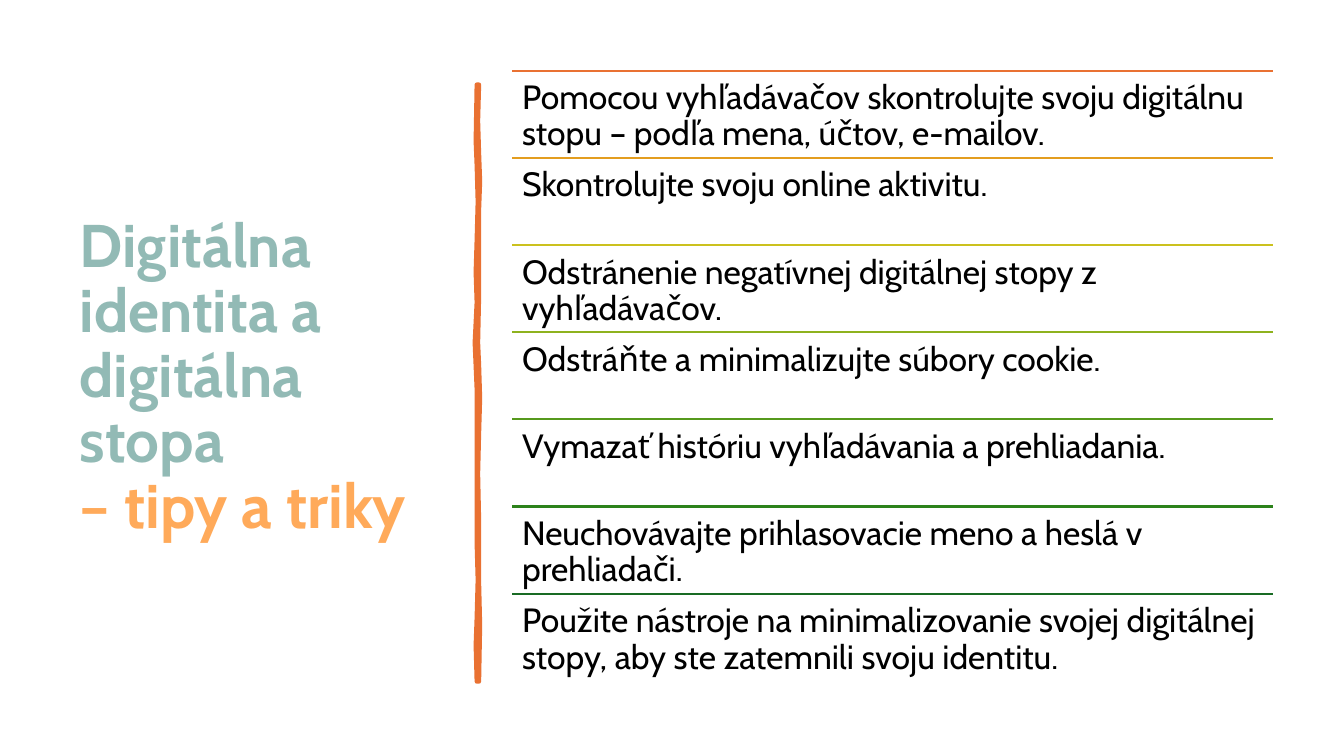
"""Build a slide with tips on digital identity and the digital footprint."""
from dataclasses import dataclass

from lxml import etree
from pptx import Presentation
from pptx.dml.color import RGBColor
from pptx.enum.shapes import MSO_CONNECTOR
from pptx.enum.text import MSO_ANCHOR, MSO_AUTO_SIZE, PP_ALIGN
from pptx.oxml.ns import qn
from pptx.slide import Slide
from pptx.text.text import TextFrame
from pptx.util import Inches, Pt

STRAIGHT = MSO_CONNECTOR.STRAIGHT
TOP, MIDDLE = MSO_ANCHOR.TOP, MSO_ANCHOR.MIDDLE
LEFT = PP_ALIGN.LEFT
NO_AUTOFIT = MSO_AUTO_SIZE.NONE
TITLE_ONLY = 5


@dataclass(frozen=True)
class Theme:
    font: str = "Cabin"
    title: str = "92BAB5"
    accent: str = "FFAA5A"
    divider: str = "E97132"
    text: str = "000000"
    title_size: float = 43
    accent_size: float = 44
    tip_size: float = 24
    line_spacing: float = 0.9
    rule_width: float = 1.5
    divider_width: float = 3.25


@dataclass(frozen=True)
class Tip:
    text: str
    color: str


THEME = Theme()

TIPS = [
    Tip("Pomocou vyhľadávačov skontrolujte svoju digitálnu stopu – podľa mena, účtov, e-mailov.", "E39D1F"),
    Tip("Skontrolujte svoju online aktivitu.", "E39D1F"),
    Tip("Odstránenie negatívnej digitálnej stopy z vyhľadávačov.", "CBC11E"),
    Tip("Odstráňte a minimalizujte súbory cookie.", "8EB21E"),
    Tip("Vymazať históriu vyhľadávania a prehliadania.", "56991D"),
    Tip("Neuchovávajte prihlasovacie meno a heslá v prehliadači.", "2C821B"),
    Tip("Použite nástroje na minimalizovanie svojej digitálnej stopy, aby ste zatemnili svoju identitu.", "196B24"),
]
TIPS[0] = Tip(TIPS[0].text, THEME.divider)

TIP_LEFT, TIP_TOP, TIP_WIDTH, TIP_PITCH = 5.08, 0.7, 7.55, 0.865

DIVIDER_OUTLINE = [
    (4.75, 0.84), (4.74, 1.2), (4.75, 1.52), (4.76, 1.8), (4.75, 2.08),
    (4.75, 2.94), (4.74, 3.4), (4.75, 3.62), (4.76, 3.95), (4.75, 4.3),
    (4.74, 4.7), (4.75, 5.16), (4.75, 5.78), (4.76, 6.2), (4.75, 6.76),
    (4.73, 6.76), (4.72, 6.4), (4.73, 6.13), (4.74, 5.75), (4.73, 5.39),
    (4.73, 4.71), (4.73, 3.86), (4.71, 3.4), (4.73, 3.0), (4.72, 2.7),
    (4.73, 2.38), (4.74, 2.0), (4.73, 1.64), (4.72, 1.4), (4.73, 0.84),
]


def write_text(frame: TextFrame, text: str, *, size: float, color: str,
               bold: bool = False, anchor: MSO_ANCHOR = TOP) -> None:
    frame.word_wrap = True
    frame.auto_size = NO_AUTOFIT
    frame.vertical_anchor = anchor
    frame.margin_left = frame.margin_right = Inches(0.1)
    paragraph = frame.paragraphs[0]
    paragraph.alignment = LEFT
    paragraph.line_spacing = THEME.line_spacing
    run = paragraph.add_run()
    run.text = text
    run.font.name = THEME.font
    run.font.size = Pt(size)
    run.font.bold = bold
    run.font.color.rgb = RGBColor.from_string(color)


def add_title(slide: Slide) -> None:
    title = slide.shapes.title
    title.left, title.top = Inches(0.69), Inches(0.7)
    title.width, title.height = Inches(3.74), Inches(6.11)
    frame = title.text_frame
    write_text(frame, "Digitálna identita a digitálna stopa", size=THEME.title_size,
               color=THEME.title, bold=True, anchor=MIDDLE)
    frame.paragraphs[0].add_line_break()
    write_text(frame, "– tipy a triky", size=THEME.accent_size,
               color=THEME.accent, bold=True, anchor=MIDDLE)


def add_divider(slide: Slide) -> None:
    points = [(Inches(x), Inches(y)) for x, y in DIVIDER_OUTLINE]
    builder = slide.shapes.build_freeform(*points[0])
    builder.add_line_segments(points[1:], close=True)
    divider = builder.convert_to_shape()
    divider.shadow.inherit = False
    color = RGBColor.from_string(THEME.divider)
    divider.fill.solid()
    divider.fill.fore_color.rgb = color
    divider.line.color.rgb = color
    divider.line.width = Pt(THEME.divider_width)


def add_tip(slide: Slide, tip: Tip, top: float) -> None:
    rule = slide.shapes.add_connector(STRAIGHT, Inches(TIP_LEFT), Inches(top),
                                      Inches(TIP_LEFT + TIP_WIDTH), Inches(top))
    rule.line.color.rgb = RGBColor.from_string(tip.color)
    rule.line.width = Pt(THEME.rule_width)
    etree.SubElement(rule.element.spPr, qn("a:effectLst"))
    box = slide.shapes.add_textbox(Inches(TIP_LEFT), Inches(top),
                                   Inches(TIP_WIDTH), Inches(TIP_PITCH))
    box.text_frame.margin_top = box.text_frame.margin_bottom = Inches(0.1)
    write_text(box.text_frame, tip.text, size=THEME.tip_size, color=THEME.text)


def main() -> None:
    presentation = Presentation()
    presentation.slide_width = Inches(13.33)
    presentation.slide_height = Inches(7.5)
    slide = presentation.slides.add_slide(presentation.slide_layouts[TITLE_ONLY])
    add_title(slide)
    add_divider(slide)
    for index, tip in enumerate(TIPS):
        add_tip(slide, tip, TIP_TOP + index * TIP_PITCH)
    presentation.save("out.pptx")


if __name__ == "__main__":
    main()
